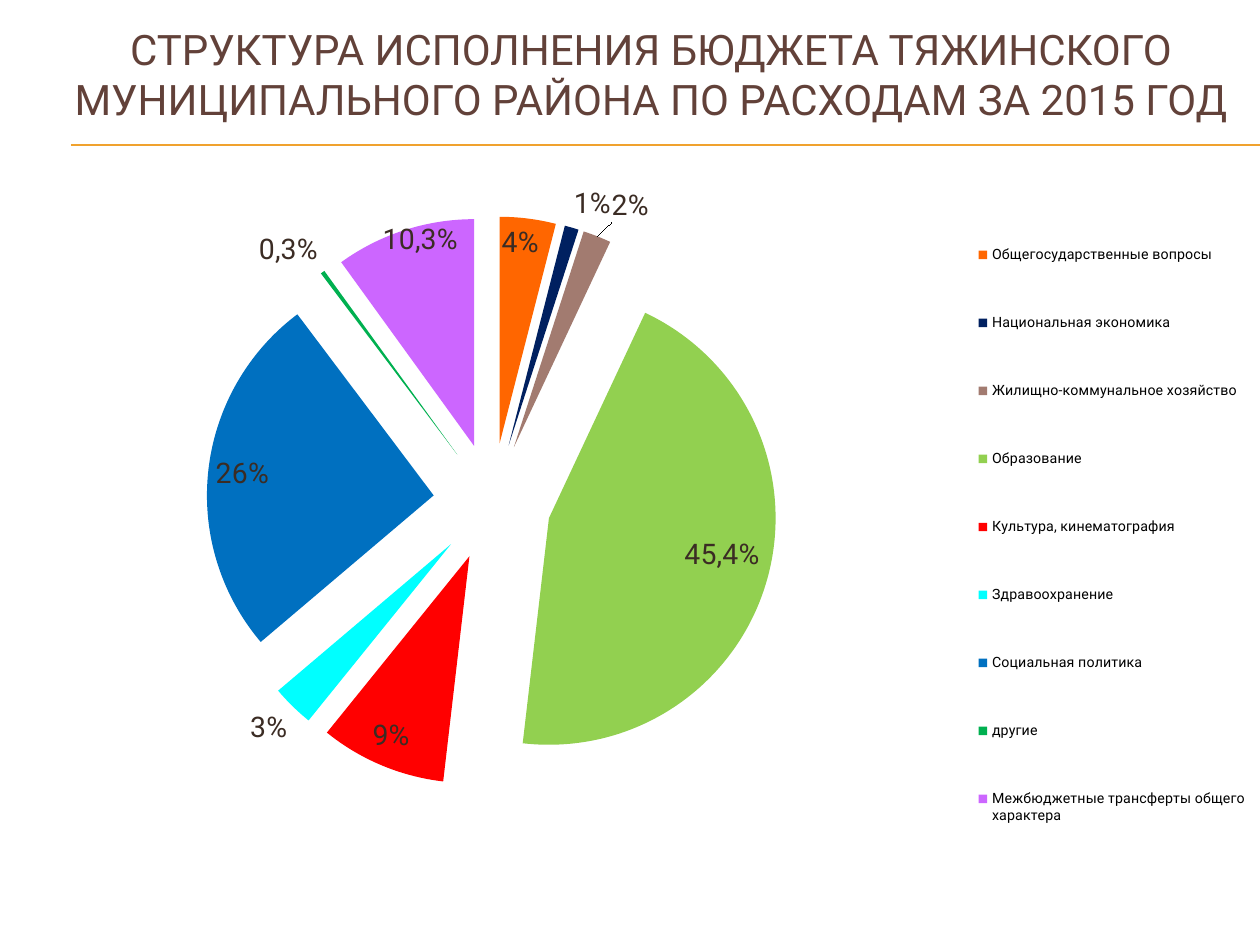
from lxml import etree
from pptx import Presentation
from pptx.chart.data import CategoryChartData
from pptx.dml.color import RGBColor
from pptx.enum.chart import XL_CHART_TYPE, XL_LABEL_POSITION, XL_LEGEND_POSITION
from pptx.enum.shapes import MSO_CONNECTOR
from pptx.enum.text import MSO_ANCHOR, PP_ALIGN
from pptx.oxml.ns import qn
from pptx.util import Pt

INSIDE = XL_LABEL_POSITION.INSIDE_END
OUTSIDE = XL_LABEL_POSITION.OUTSIDE_END
FONT = "Roboto"
LABEL_COLOR = "3B2C24"
EXPLOSION = 26

TITLE = ("СТРУКТУРА ИСПОЛНЕНИЯ БЮДЖЕТА ТЯЖИНСКОГО "
         "МУНИЦИПАЛЬНОГО РАЙОНА ПО РАСХОДАМ ЗА 2015 ГОД")

# Category, share, colour, label position, label text (None: computed percentage)
EXPENSES = [
    ("Общегосударственные вопросы", 4, "FF6600", INSIDE, None),
    ("Национальная экономика", 1, "002060", OUTSIDE, None),
    ("Жилищно-коммунальное хозяйство", 2, "A27B70", OUTSIDE, None),
    ("Образование", 45, "92D050", INSIDE, "45,4%"),
    ("Культура, кинематография", 9, "FF0000", INSIDE, None),
    ("Здравоохранение", 3, "00FFFF", OUTSIDE, None),
    ("Социальная политика", 26, "0070C0", INSIDE, "26%"),
    ("другие", 0.3, "00B050", OUTSIDE, "0,3%"),
    ("Межбюджетные трансферты общего характера", 10, "CC66FF", INSIDE, "10,3%"),
]
# Label shifts by slice, as fractions of the chart size
LABEL_OFFSETS = {
    0: (0.01, 0),
    2: (0.01, -0.01),
    3: (0, -0.01),
    4: (-0.01, -0.01),
    6: (0, -0.02),
    8: (-0.02, -0.02),
}


def color(value):
    return RGBColor.from_string(value)


def style_font(font, size, value):
    font.name = FONT
    font.size = Pt(size)
    font.color.rgb = color(value)


def manual_layout(**settings):
    layout = etree.Element(qn("c:layout"))
    manual = etree.SubElement(layout, qn("c:manualLayout"))
    for name, value in settings.items():
        etree.SubElement(manual, qn(f"c:{name}")).set("val", str(value))
    return layout


def add_title(slide):
    box = slide.shapes.add_textbox(Pt(24), Pt(0), Pt(696), Pt(84))
    frame = box.text_frame
    frame.word_wrap = True
    frame.vertical_anchor = MSO_ANCHOR.MIDDLE
    paragraph = frame.paragraphs[0]
    paragraph.alignment = PP_ALIGN.CENTER
    run = paragraph.add_run()
    run.text = TITLE
    style_font(run.font, 24, "624139")


def add_rule(slide, y):
    rule = slide.shapes.add_connector(
        MSO_CONNECTOR.STRAIGHT, Pt(40.5), Pt(y), Pt(720), Pt(y))
    rule.line.color.rgb = color("F0A22E")
    rule.line.width = Pt(0.75)
    etree.SubElement(rule._element.spPr, qn("a:effectLst"))


def label_point(point, position, text, offset):
    label = point.data_label
    if text:
        run = label.text_frame.paragraphs[0].add_run()
        run.text = text
        style_font(run.font, 16.2, LABEL_COLOR)
    else:
        style_font(label.font, 16.2, LABEL_COLOR)
    label.position = position
    element = label._dLbl
    element.find(qn("c:showVal")).set("val", "0")
    element.find(qn("c:showPercent")).set("val", "1")
    if offset:
        element.insert(1, manual_layout(x=offset[0], y=offset[1]))


def add_expense_chart(slide):
    data = CategoryChartData()
    data.categories = [expense[0] for expense in EXPENSES]
    data.add_series("Series 1", [expense[1] for expense in EXPENSES])
    chart = slide.shapes.add_chart(
        XL_CHART_TYPE.PIE, Pt(38.2), Pt(105.8), Pt(681), Pt(396.7), data).chart
    chart.has_title = False
    style_font(chart.font, 16.2, "000000")

    # Plot area and exploded slices
    plot = chart.plots[0]
    plot.vary_by_categories = True
    plot_area = chart._chartSpace.chart.plotArea
    for old_layout in plot_area.findall(qn("c:layout")):
        plot_area.remove(old_layout)
    plot_area.insert(0, manual_layout(
        layoutTarget="inner", xMode="edge", yMode="edge",
        x=0, y=0.045, w=0.714, h=0.823))
    series = plot.series[0]
    series.format.line.fill.background()
    explosion = etree.Element(qn("c:explosion"))
    explosion.set("val", str(EXPLOSION))
    series._element.find(qn("c:spPr")).addnext(explosion)

    # Slice colours and labels
    plot.has_data_labels = True
    labels = plot.data_labels
    labels.show_percentage = True
    labels.show_value = False
    style_font(labels.font, 16.2, LABEL_COLOR)
    for index, (_, _, fill, position, text) in enumerate(EXPENSES):
        point = series.points[index]
        point.format.fill.solid()
        point.format.fill.fore_color.rgb = color(fill)
        point.format.line.fill.background()
        label_point(point, position, text, LABEL_OFFSETS.get(index))

    # Legend
    chart.has_legend = True
    legend = chart.legend
    legend.position = XL_LEGEND_POSITION.RIGHT
    legend.include_in_layout = False
    style_font(legend.font, 8.1, "000000")
    for old_layout in legend._element.findall(qn("c:layout")):
        legend._element.remove(old_layout)
    legend._element.find(qn("c:legendPos")).addnext(manual_layout(
        xMode="edge", yMode="edge", x=0.757, y=0.015, w=0.24, h=0.98))


def main():
    presentation = Presentation()
    presentation.slide_width = Pt(720)
    presentation.slide_height = Pt(540)
    slide = presentation.slides.add_slide(presentation.slide_layouts[6])
    for y in (82.9, 83.2):
        add_rule(slide, y)
    add_title(slide)
    add_expense_chart(slide)
    presentation.save("out.pptx")


if __name__ == "__main__":
    main()
